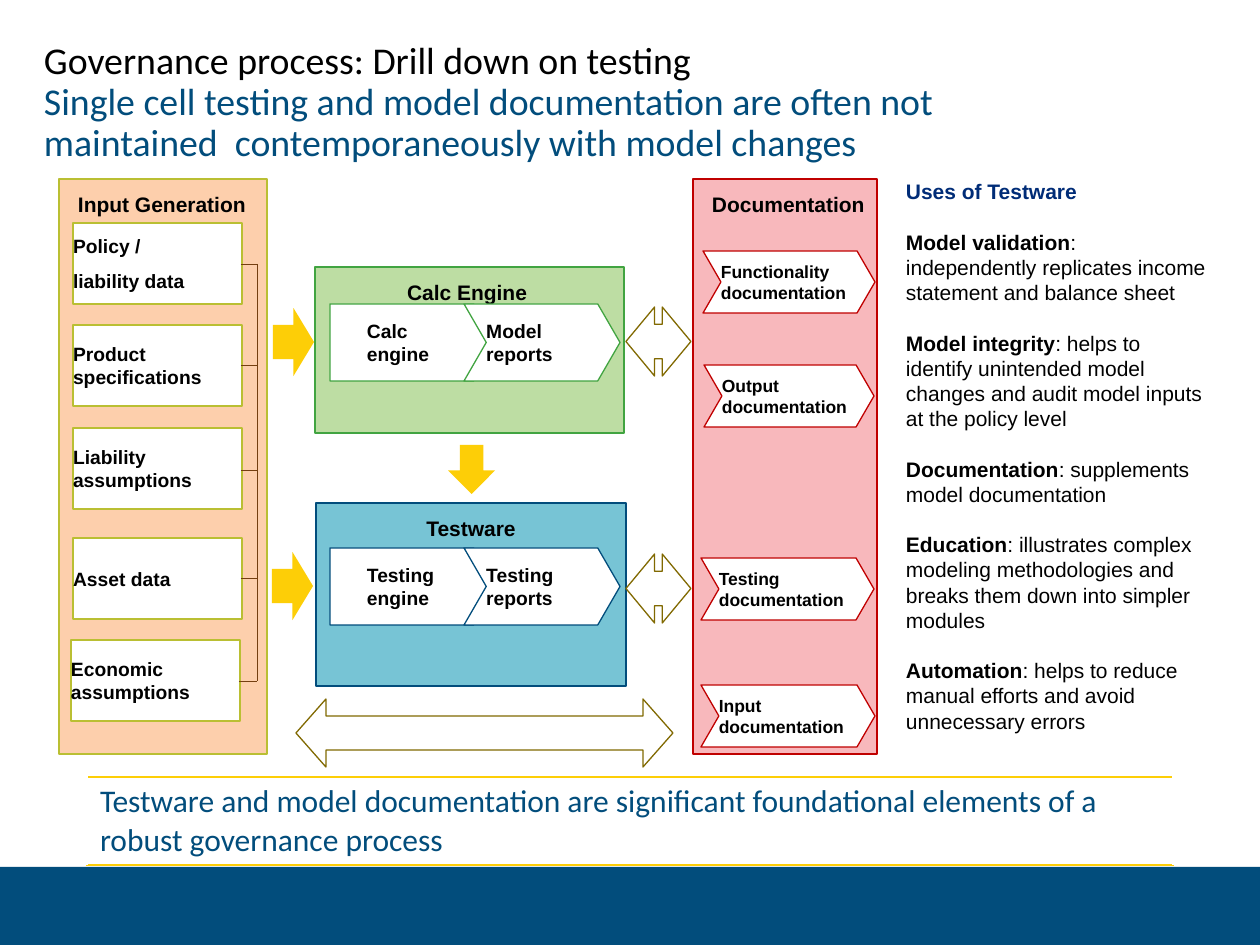
from lxml.etree import SubElement
from pptx import Presentation
from pptx.dml.color import RGBColor
from pptx.enum.shapes import MSO_CONNECTOR as Connector, MSO_SHAPE as Shape
from pptx.enum.text import MSO_ANCHOR as Anchor, PP_ALIGN as Align
from pptx.oxml.ns import qn
from pptx.util import Pt

EMU_PER_PX = 914400 / 126
NAVY, YELLOW, WHITE, BLACK = "024D7C", "FDCE07", "FFFFFF", "000000"
OLIVE, GREEN, RED, BRONZE, BROWN = "BABF33", "41A441", "C00000", "816901", "743F10"
PANEL_INSETS = (19, 13, 19, 13)
CHEVRON_INSETS = (0, 6, 0, 6)
ENGINE_INSETS = (13, 6, 48, 6)


def px(length):
    return round(length * EMU_PER_PX)


def rgb(code):
    return RGBColor.from_string(code)


def write(frame, paragraphs, size=11, font="Arial", color=BLACK, bold=True, align=None,
          anchor=Anchor.TOP, insets=(0, 0, 0, 0), wrap=True, indent=0, gap=0, spacing=None):
    frame.word_wrap = wrap
    frame.vertical_anchor = anchor
    (frame.margin_left, frame.margin_top,
     frame.margin_right, frame.margin_bottom) = map(px, insets)
    for index, runs in enumerate(paragraphs):
        paragraph = frame.paragraphs[0] if index == 0 else frame.add_paragraph()
        paragraph.alignment = align or Align.LEFT
        if indent:
            paragraph._p.get_or_add_pPr().set("marL", str(px(indent)))
        if gap and index:
            paragraph.space_before = Pt(gap)
        if spacing:
            paragraph.line_spacing = spacing
        for words, run_bold, run_color in runs:
            run = paragraph.add_run()
            run.text = words
            run.font.name = font
            run.font.size = Pt(size)
            run.font.bold = bold if run_bold is None else run_bold
            run.font.color.rgb = rgb(run_color or color)


def plain(*lines):
    return [[(line, None, None)] for line in lines]


def block(slide, kind, box, fill, line=None, adjust=()):
    shape = slide.shapes.add_shape(kind, *map(px, box))
    shape.shadow.inherit = False
    shape.fill.solid()
    shape.fill.fore_color.rgb = rgb(fill)
    if line:
        shape.line.color.rgb = rgb(line)
        shape.line.width = Pt(0.75)
    else:
        shape.line.fill.background()
    for index, value in enumerate(adjust):
        shape.adjustments[index] = value
    return shape


def panel(slide, box, fill, line, heading, **text_format):
    shape = block(slide, Shape.RECTANGLE, box, fill, line)
    write(shape.text_frame, plain(heading), size=12, insets=PANEL_INSETS,
          wrap=False, **text_format)


def input_box(slide, left, top, *lines):
    shape = block(slide, Shape.RECTANGLE, (left, top, 169, 81), WHITE, OLIVE)
    write(shape.text_frame, plain(*lines), anchor=Anchor.MIDDLE, gap=6.6)


def step(slide, kind, box, line, *lines, **text_format):
    shape = block(slide, kind, box, WHITE, line, [0.289])
    write(shape.text_frame, plain(*lines), anchor=Anchor.MIDDLE, **text_format)


def engine_steps(slide, top, line, engine, reports):
    step(slide, Shape.PENTAGON, (330, top, 166, 77), line, engine,
         insets=ENGINE_INSETS, indent=24)
    step(slide, Shape.CHEVRON, (464, top, 156, 77), line, *reports, insets=CHEVRON_INSETS)


def wire(slide, x1, y1, x2, y2):
    connector = slide.shapes.add_connector(Connector.STRAIGHT, *map(px, (x1, y1, x2, y2)))
    connector.line.color.rgb = rgb(BROWN)
    connector.line.width = Pt(0.5)
    SubElement(connector._element.spPr, qn("a:effectLst"))


def text_area(slide, box, paragraphs, **text_format):
    area = slide.shapes.add_textbox(*map(px, box))
    write(area.text_frame, paragraphs, **text_format)


def conclusion(slide, box, sentence):
    table = slide.shapes.add_table(1, 1, *map(px, box)).table
    table.first_row = table.horz_banding = False
    cell = table.cell(0, 0)
    properties = cell._tc.get_or_add_tcPr()
    for edge, color, width in (("lnL", WHITE, 1), ("lnR", WHITE, 1),
                               ("lnT", YELLOW, 0.75), ("lnB", YELLOW, 0.75)):
        border = SubElement(properties, qn(f"a:{edge}"), w=str(Pt(width)))
        SubElement(SubElement(border, qn("a:solidFill")), qn("a:srgbClr"), val=color)
    cell.fill.background()
    write(cell.text_frame, plain(sentence), size=18, font="Calibri", color=NAVY, bold=False)
    cell.vertical_anchor = Anchor.BOTTOM
    cell.margin_left = cell.margin_right = px(13)
    cell.margin_top = cell.margin_bottom = px(6)


def draw_inputs(slide):
    panel(slide, (59, 179, 208, 575), "FDCFAC", OLIVE, "Input Generation")
    spine = 257
    inputs = (
        (73, 223, 264, ("Policy /", "liability data")),
        (73, 325, 365, ("Product specifications",)),
        (73, 428, 470, ("Liability assumptions",)),
        (73, 538, 578, ("Asset data",)),
        (71, 640, 681, ("Economic assumptions",)),
    )
    for left, top, wire_y, lines in inputs:
        input_box(slide, left, top, *lines)
        wire(slide, left + 168, wire_y, spine, wire_y)
    wire(slide, spine, inputs[0][2], spine, inputs[-1][2])


def draw_engines(slide):
    panel(slide, (315, 267, 309, 166), "BDDDA3", GREEN, "Calc Engine", indent=73)
    panel(slide, (316, 503, 310, 183), "77C4D5", NAVY, "Testware", align=Align.CENTER)
    engine_steps(slide, 304, GREEN, "Calc engine", ["Model reports"])
    engine_steps(slide, 548, NAVY, "Testing engine", ["Testing", "reports"])


def draw_documents(slide):
    panel(slide, (693, 179, 184, 575), "F8B8BC", RED, "Documentation")
    for left, top, width, subject in ((703, 251, 172, "Functionality"),
                                      (704, 365, 170, "Output"),
                                      (701, 558, 173, "Testing"),
                                      (701, 685, 174, "Input")):
        step(slide, Shape.CHEVRON, (left, top, width, 62), RED,
             f"{subject} documentation", size=10, insets=CHEVRON_INSETS)


def draw_flows(slide):
    for box in ((273, 308, 41, 68), (272, 552, 41, 68)):
        block(slide, Shape.RIGHT_ARROW, box, YELLOW)
    block(slide, Shape.RIGHT_ARROW, (447, 446, 49, 47), YELLOW).rotation = 90
    for box in ((296, 699, 377, 68), (626, 307, 65, 69), (626, 554, 65, 69)):
        block(slide, Shape.LEFT_RIGHT_ARROW, box, WHITE, BRONZE, [0.5, 0.441])


def main():
    deck = Presentation()
    deck.slide_width, deck.slide_height = px(1260), px(945)
    slide = deck.slides.add_slide(deck.slide_layouts[6])

    block(slide, Shape.RECTANGLE, (0, 867, 1260, 78), NAVY)
    draw_documents(slide)
    draw_inputs(slide)
    draw_engines(slide)
    draw_flows(slide)

    uses = (
        ("Model validation",
         ": independently replicates income statement and balance sheet"),
        ("Model integrity", ": helps to identify unintended model changes "
         "and audit model inputs at the policy level"),
        ("Documentation", ": supplements model documentation"),
        ("Education", ": illustrates complex modeling methodologies "
         "and breaks them down into simpler modules"),
        ("Automation", ": helps to reduce manual efforts and avoid unnecessary errors"),
    )
    testware_uses = [[("Uses of Testware", True, "002C77")]]
    testware_uses += [[(use, True, None), (benefit, False, None)] for use, benefit in uses]
    text_area(slide, (906, 179, 300, 611), testware_uses, size=12, gap=14.4)

    conclusion(slide, (87, 777, 1086, 88),
               "Testware and model documentation are significant foundational elements "
               "of a robust governance process")
    title = [
        [("Governance process: Drill down on testing", None, BLACK)],
        [("Single cell testing and model documentation are often not "
          "maintained  contemporaneously with model changes", None, NAVY)],
    ]
    text_area(slide, (31, 53, 1086, 101), title, size=21.6, font="Calibri", bold=False,
              anchor=Anchor.MIDDLE, insets=(13, 6, 13, 6), spacing=0.9)
    deck.save("out.pptx")


if __name__ == "__main__":
    main()
